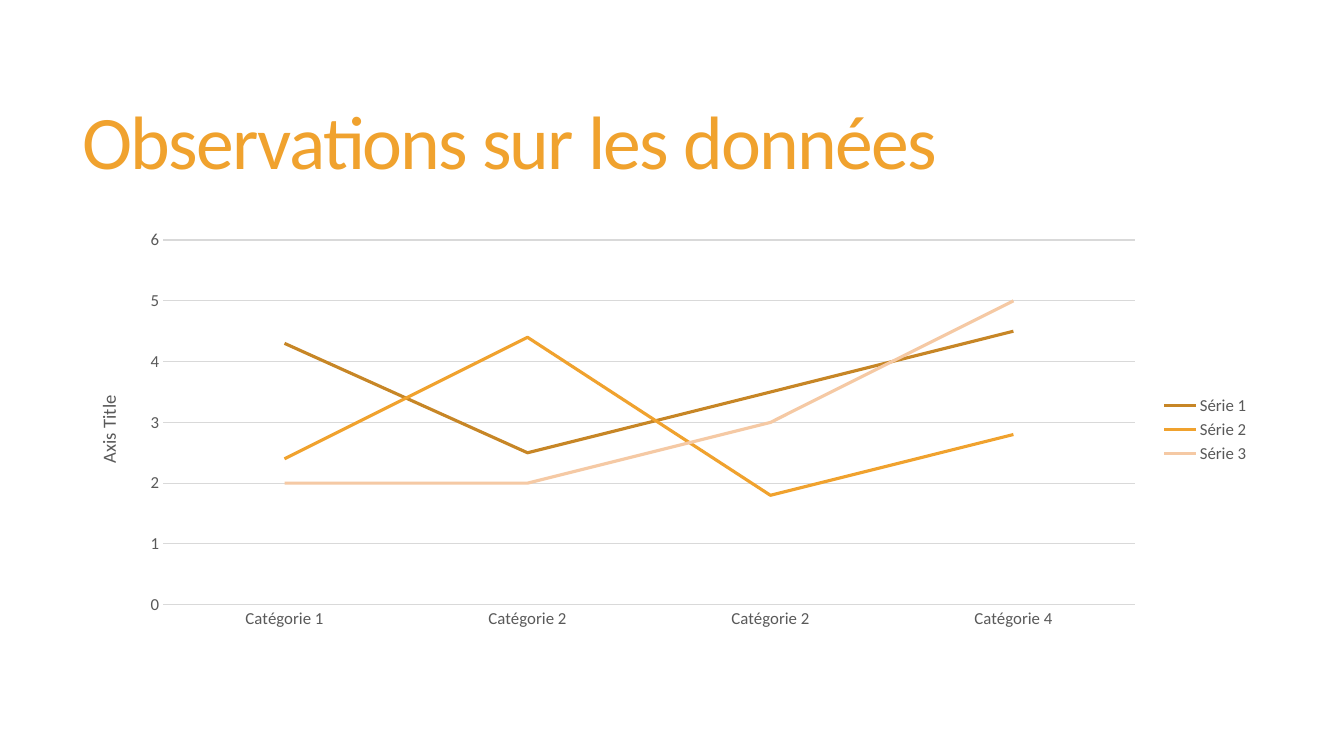
"""Build a slide with a title and a three-series line chart."""
import pptx
import pptx.chart.data
import pptx.dml.color
import pptx.enum.chart
import pptx.enum.text
import pptx.util
from pptx.util import Inches

TITLE = "Observations sur les données"
AXIS_TITLE = "Axis Title"
CATEGORIES = ["Catégorie 1", "Catégorie 2", "Catégorie 2", "Catégorie 4"]
SERIES = [
    ("Série 1", (4.3, 2.5, 3.5, 4.5), "C78626"),
    ("Série 2", (2.4, 4.4, 1.8, 2.8), "F0A22E"),
    ("Série 3", (2, 2, 3, 5), "F5C9A4"),
]
FONT = "Calibri"
ACCENT, GREY, GRID = "F0A22E", "595959", "D9D9D9"


def set_font(font, size, color):
    font.name = FONT
    font.size = pptx.util.Pt(size)
    font.bold = False
    font.color.rgb = pptx.dml.color.RGBColor.from_string(color)


def set_line(line, width, color):
    line.width = pptx.util.Pt(width)
    line.color.rgb = pptx.dml.color.RGBColor.from_string(color)


def add_title(page):
    box = page.shapes.add_textbox(Inches(0.72), Inches(0.55), Inches(11.78), Inches(1.81))
    frame = box.text_frame
    frame.word_wrap = True
    frame.vertical_anchor = pptx.enum.text.MSO_ANCHOR.MIDDLE
    para = frame.paragraphs[0]
    para.line_spacing = 0.85
    span = para.add_run()
    span.text = TITLE
    set_font(para.font, 54, ACCENT)
    span.font._element.set("spc", "-120")


def add_line_chart(page):
    chart_data = pptx.chart.data.CategoryChartData()
    chart_data.categories = CATEGORIES
    for name, values, _ in SERIES:
        chart_data.add_series(name, values)
    chart = page.shapes.add_chart(
        pptx.enum.chart.XL_CHART_TYPE.LINE,
        Inches(0.74), Inches(2.2), Inches(11.76), Inches(4.12), chart_data,
    ).chart
    set_font(chart.font, 12, GREY)
    chart.has_title = False
    chart.has_legend = True
    chart.legend.position = pptx.enum.chart.XL_LEGEND_POSITION.RIGHT
    chart.legend.include_in_layout = False
    set_font(chart.legend.font, 12, GREY)

    plot = chart.plots[0]
    plot.vary_by_categories = False
    for series, (_, _, color) in zip(plot.series, SERIES):
        series.smooth = False
        series.marker.style = pptx.enum.chart.XL_MARKER_STYLE.NONE
        set_line(series.format.line, 2.25, color)

    for axis in (chart.category_axis, chart.value_axis):
        axis.major_tick_mark = pptx.enum.chart.XL_TICK_MARK.NONE
        axis.minor_tick_mark = pptx.enum.chart.XL_TICK_MARK.NONE
        set_font(axis.tick_labels.font, 12, GREY)
    set_line(chart.category_axis.format.line, 0.75, GRID)

    value_axis = chart.value_axis
    value_axis.minimum_scale, value_axis.maximum_scale, value_axis.major_unit = 0, 6, 1
    value_axis.format.line.fill.background()
    value_axis.has_major_gridlines = True
    set_line(value_axis.major_gridlines.format.line, 0.75, GRID)
    frame = value_axis.axis_title.text_frame
    frame.text = AXIS_TITLE
    frame._txBody.bodyPr.set("rot", "-5400000")
    frame._txBody.bodyPr.set("vert", "horz")
    set_font(frame.paragraphs[0].font, 13.3, GREY)
    set_font(frame.paragraphs[0].runs[0].font, 13.3, GREY)


def main():
    deck = pptx.Presentation()
    deck.slide_width, deck.slide_height = Inches(13.33), Inches(7.5)
    page = deck.slides.add_slide(deck.slide_layouts[6])
    add_title(page)
    add_line_chart(page)
    deck.save("out.pptx")


if __name__ == "__main__":
    main()
